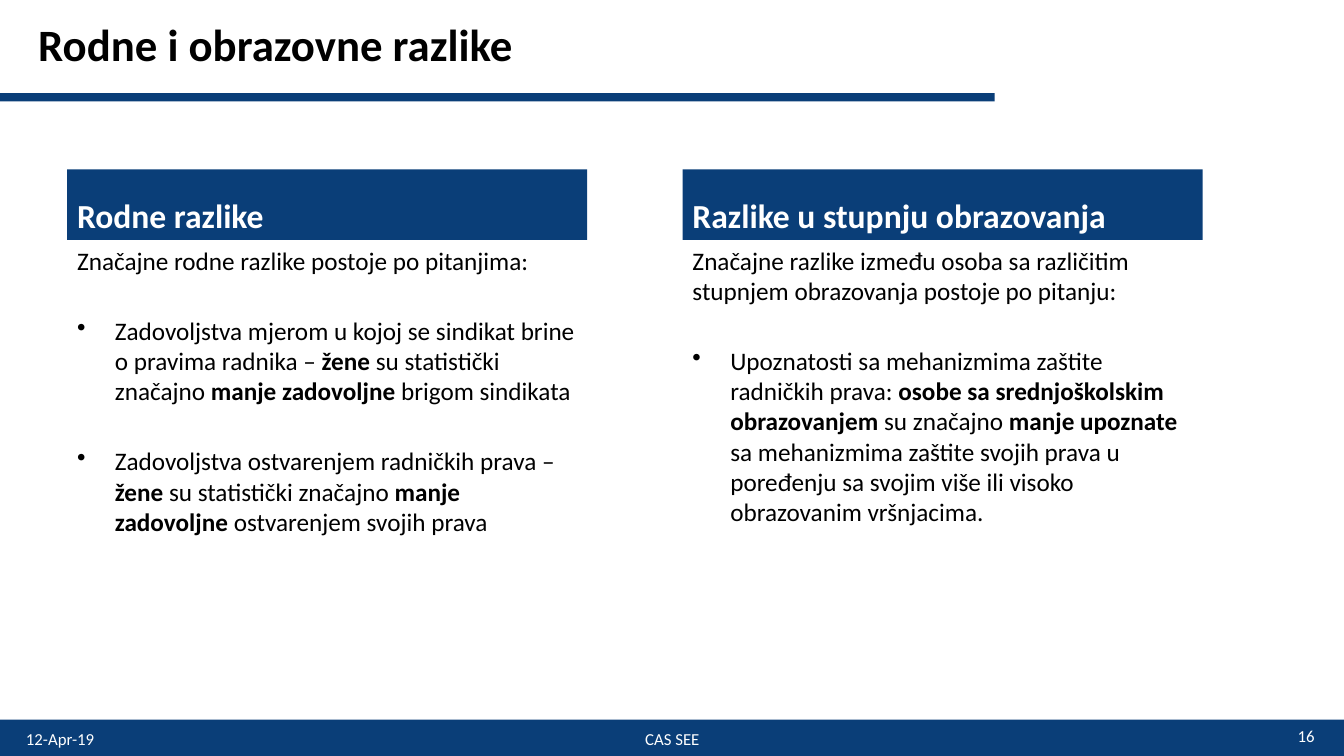
import pptx
import pptx.dml.color
import pptx.enum.shapes
import pptx.enum.text
import pptx.util
import lxml.etree

Pt = pptx.util.Pt
ALIGN = pptx.enum.text.PP_ALIGN
ANCHOR = pptx.enum.text.MSO_ANCHOR
COLORS = {"navy": "0A3E78", "white": "FFFFFF", "black": "000000"}
FONT = "Calibri"
SLIDE_WIDTH, SLIDE_HEIGHT = 960, 540
HEADING_HEIGHT = 50.4
BULLET_INDENT = 27
BULLET_GAP = 28.5

COLUMNS = [
    (
        "Rodne razlike",
        "Značajne rodne razlike postoje po pitanjima:",
        [
            "Zadovoljstva mjerom u kojoj se sindikat brine o pravima radnika – "
            "*žene *su statistički značajno *manje zadovoljne *brigom sindikata",
            "Zadovoljstva ostvarenjem radničkih prava – "
            "*žene *su statistički značajno *manje zadovoljne *ostvarenjem svojih prava",
        ],
    ),
    (
        "Razlike u stupnju obrazovanja",
        "Značajne razlike između osoba sa različitim stupnjem obrazovanja postoje po pitanju:",
        [
            "Upoznatosti sa mehanizmima zaštite radničkih prava: "
            "*osobe sa srednjoškolskim obrazovanjem *su značajno *manje upoznate *"
            "sa mehanizmima zaštite svojih prava u poređenju sa svojim više ili visoko "
            "obrazovanim vršnjacima.",
        ],
    ),
]


def rgb(name):
    return pptx.dml.color.RGBColor.from_string(COLORS[name])


def style(paragraph, size, color, bold=None, align=ALIGN.LEFT):
    paragraph.alignment = align
    font = paragraph.font
    font.name, font.size, font.bold = FONT, Pt(size), bold
    font.color.rgb = rgb(color)


def add_bar(slide, left, top, width, height):
    shape = slide.shapes.add_shape(
        pptx.enum.shapes.MSO_SHAPE.RECTANGLE, Pt(left), Pt(top), Pt(width), Pt(height)
    )
    shape.shadow.inherit = False
    shape.fill.solid()
    shape.fill.fore_color.rgb = rgb("navy")
    shape.line.fill.background()
    return shape


def add_text_box(slide, left, top, width, height, anchor=ANCHOR.MIDDLE):
    shape = slide.shapes.add_textbox(Pt(left), Pt(top), Pt(width), Pt(height))
    shape.text_frame.word_wrap = True
    shape.text_frame.vertical_anchor = anchor
    return shape.text_frame


def add_bullet(paragraph, marked_text):
    properties = paragraph._p.get_or_add_pPr()
    properties.set("marL", str(Pt(BULLET_INDENT)))
    properties.set("indent", str(-Pt(BULLET_INDENT)))
    paragraph.space_before = Pt(BULLET_GAP)
    bullet = lxml.etree.SubElement(properties, pptx.oxml.ns.qn("a:buChar"))
    bullet.set("char", "•")
    for index, part in enumerate(marked_text.split("*")):
        run = paragraph.add_run()
        run.text = part
        if index % 2:
            run.font.bold = True
    style(paragraph, 18, "black")


def add_header(slide, left, top, width, height):
    add_bar(slide, left, top + height - 6, 710.6, 6)
    frame = add_text_box(slide, left + 20.2, top - 13.7, width - 137.8, 90)
    paragraph = frame.paragraphs[0]
    paragraph.text = "Rodne i obrazovne razlike"
    style(paragraph, 32, "black", bold=True)


def add_column(slide, left, top, width, height, heading, intro, bullets):
    frame = add_bar(slide, left, top, width, HEADING_HEIGHT).text_frame
    frame.word_wrap = True
    frame.vertical_anchor = ANCHOR.BOTTOM
    frame.paragraphs[0].text = heading
    style(frame.paragraphs[0], 24, "white", bold=True)

    body = add_text_box(
        slide, left, top + HEADING_HEIGHT, width, height - HEADING_HEIGHT, ANCHOR.TOP
    )
    body.paragraphs[0].text = intro
    style(body.paragraphs[0], 18, "black")
    for bullet in bullets:
        add_bullet(body.add_paragraph(), bullet)


def add_footer(slide, left, top, width, height):
    add_bar(slide, left, top, width, height)
    entries = [
        ("12-Apr-19", 11.5, -0.7, 224, ALIGN.LEFT),
        ("CAS SEE", 328.3, -0.7, 304, ALIGN.CENTER),
        ("16", 722.2, -2.9, 224, ALIGN.RIGHT),
    ]
    for text, offset, rise, entry_width, align in entries:
        frame = add_text_box(slide, left + offset, top + rise, entry_width, 28.8)
        frame.paragraphs[0].text = text
        style(frame.paragraphs[0], 12, "white", align=align)


def main():
    presentation = pptx.Presentation()
    presentation.slide_width = Pt(SLIDE_WIDTH)
    presentation.slide_height = Pt(SLIDE_HEIGHT)
    slide = presentation.slides.add_slide(presentation.slide_layouts[6])
    add_header(slide, 0, 0, SLIDE_WIDTH, 72.5)
    for index, (heading, intro, bullets) in enumerate(COLUMNS):
        add_column(slide, 48 + index * 439.6, 121, 371.5, 361.4, heading, intro, bullets)
    add_footer(slide, 0, 514, SLIDE_WIDTH, 26)
    presentation.save("out.pptx")


if __name__ == "__main__":
    main()
